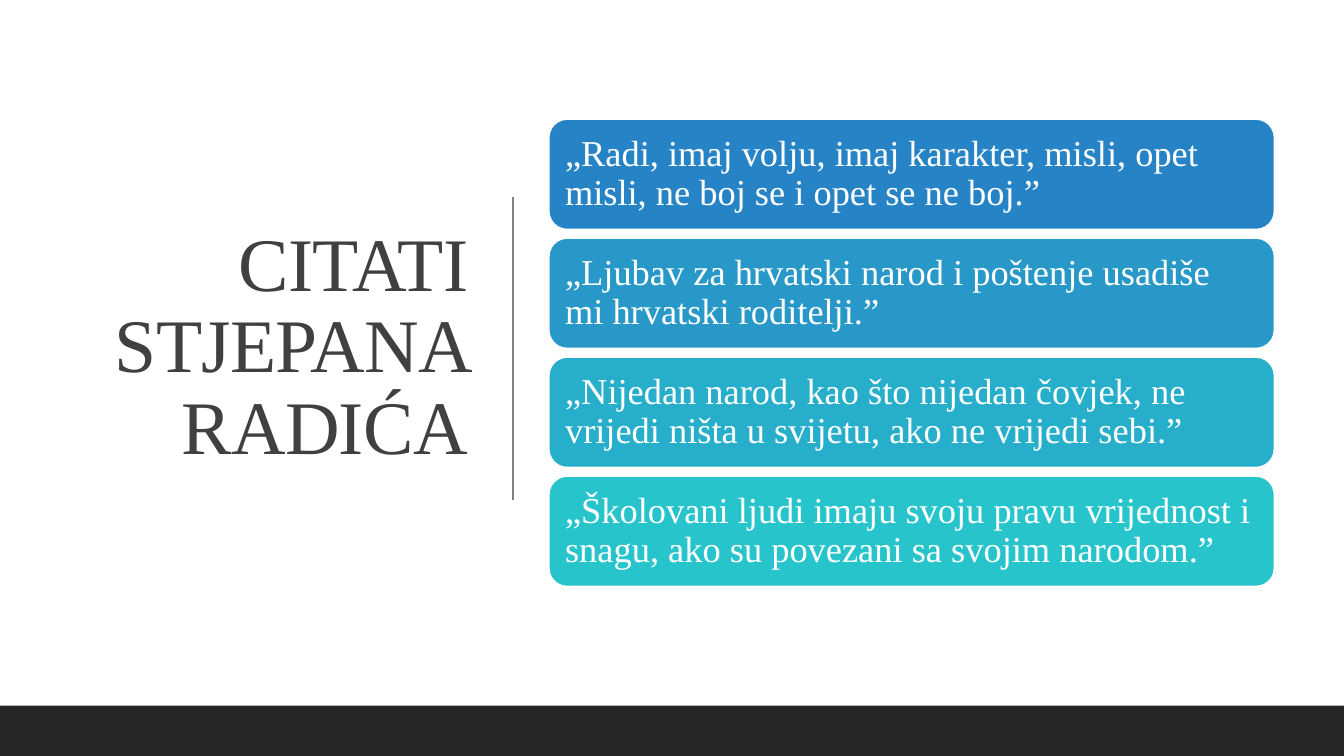
"""Build a slide with a title beside four stacked quotation cards."""
from dataclasses import dataclass
from typing import Any

from lxml import etree
from pptx import Presentation
from pptx.dml.color import RGBColor
from pptx.enum import shapes, text
from pptx.oxml import ns
from pptx.util import Pt


@dataclass(frozen=True)
class Theme:
    font: str = "Times New Roman"
    title_size: float = 54
    quote_size: float = 26
    title_color: str = "404040"
    divider_color: str = "808080"
    footer_color: str = "262626"
    white: str = "FFFFFF"


@dataclass(frozen=True)
class Box:
    left: float
    top: float
    width: float
    height: float

    def lengths(self) -> tuple:
        return Pt(self.left), Pt(self.top), Pt(self.width), Pt(self.height)


@dataclass(frozen=True)
class Quote:
    words: str
    fill: str


THEME = Theme()
SLIDE = Box(0, 0, 960, 540)
TITLE = Box(28.8, 49.7, 312.5, 398.2)
FOOTER = Box(0, 504, 960, 36)
FIRST_CARD = Box(392, 85, 518.4, 79)
CARD_STEP = 85
DIVIDER_X, DIVIDER_TOP, DIVIDER_BOTTOM = 366.5, 141, 357
QUOTES = (
    Quote("„Radi, imaj volju, imaj karakter, misli, opet misli, ne boj se i opet se ne boj.”", "2683C6"),
    Quote("„Ljubav za hrvatski narod i poštenje usadiše mi hrvatski roditelji.”", "2798C8"),
    Quote("„Nijedan narod, kao što nijedan čovjek, ne vrijedi ništa u svijetu, ako ne vrijedi sebi.”", "27AECA"),
    Quote("„Školovani ljudi imaju svoju pravu vrijednost i snagu, ako su povezani sa svojim narodom.”", "28C4CC"),
)


def apply(target: Any, values: dict[str, Any]) -> None:
    for name, value in values.items():
        setattr(target, name, value)


def write(shape: Any, words: str, size: float, color: str, align: Any, margin: float) -> Any:
    frame = shape.text_frame
    apply(frame, {
        "word_wrap": True,
        "auto_size": text.MSO_AUTO_SIZE.NONE,
        "vertical_anchor": text.MSO_ANCHOR.MIDDLE,
        **{f"margin_{side}": Pt(margin) for side in ("left", "top", "right", "bottom")},
    })
    para = frame.paragraphs[0]
    apply(para, {"alignment": align, "line_spacing": 0.9})
    span = para.add_run()
    span.text = words
    apply(span.font, {"name": THEME.font, "size": Pt(size)})
    span.font.color.rgb = RGBColor.from_string(color)
    return span


def add_block(page: Any, kind: Any, box: Box, fill: str) -> Any:
    shape = page.shapes.add_shape(kind, *box.lengths())
    shape.shadow.inherit = False
    shape.fill.solid()
    shape.fill.fore_color.rgb = RGBColor.from_string(fill)
    shape.line.fill.background()
    return shape


def add_title(page: Any) -> None:
    title = page.shapes.title
    apply(title, dict(zip(("left", "top", "width", "height"), TITLE.lengths())))
    span = write(title, "CITATI STJEPANA RADIĆA", THEME.title_size,
                 THEME.title_color, text.PP_ALIGN.RIGHT, 7.2)
    span._r.get_or_add_rPr().set("spc", "-50")


def add_divider(page: Any) -> None:
    line = page.shapes.add_connector(
        shapes.MSO_CONNECTOR.STRAIGHT, Pt(DIVIDER_X), Pt(DIVIDER_TOP), Pt(DIVIDER_X), Pt(DIVIDER_BOTTOM))
    line.line.width = Pt(1)
    line.line.color.rgb = RGBColor.from_string(THEME.divider_color)
    etree.SubElement(line._element.spPr, ns.qn("a:effectLst"))


def add_card(page: Any, quote: Quote, index: int) -> None:
    box = Box(FIRST_CARD.left, FIRST_CARD.top + index * CARD_STEP, FIRST_CARD.width, FIRST_CARD.height)
    card = add_block(page, shapes.MSO_SHAPE.ROUNDED_RECTANGLE, box, quote.fill)
    card.line.width = Pt(1.25)
    card.line.color.rgb = RGBColor.from_string(THEME.white)
    write(card, quote.words, THEME.quote_size, THEME.white, text.PP_ALIGN.LEFT, 7.8)


def main() -> None:
    deck = Presentation()
    apply(deck, {"slide_width": Pt(SLIDE.width), "slide_height": Pt(SLIDE.height)})
    page = deck.slides.add_slide(deck.slide_layouts.get_by_name("Title Only"))
    page.background.fill.solid()
    page.background.fill.fore_color.rgb = RGBColor.from_string(THEME.white)
    add_title(page)
    add_divider(page)
    add_block(page, shapes.MSO_SHAPE.RECTANGLE, FOOTER, THEME.footer_color)
    for index, quote in enumerate(QUOTES):
        add_card(page, quote, index)
    deck.save("out.pptx")


if __name__ == "__main__":
    main()
